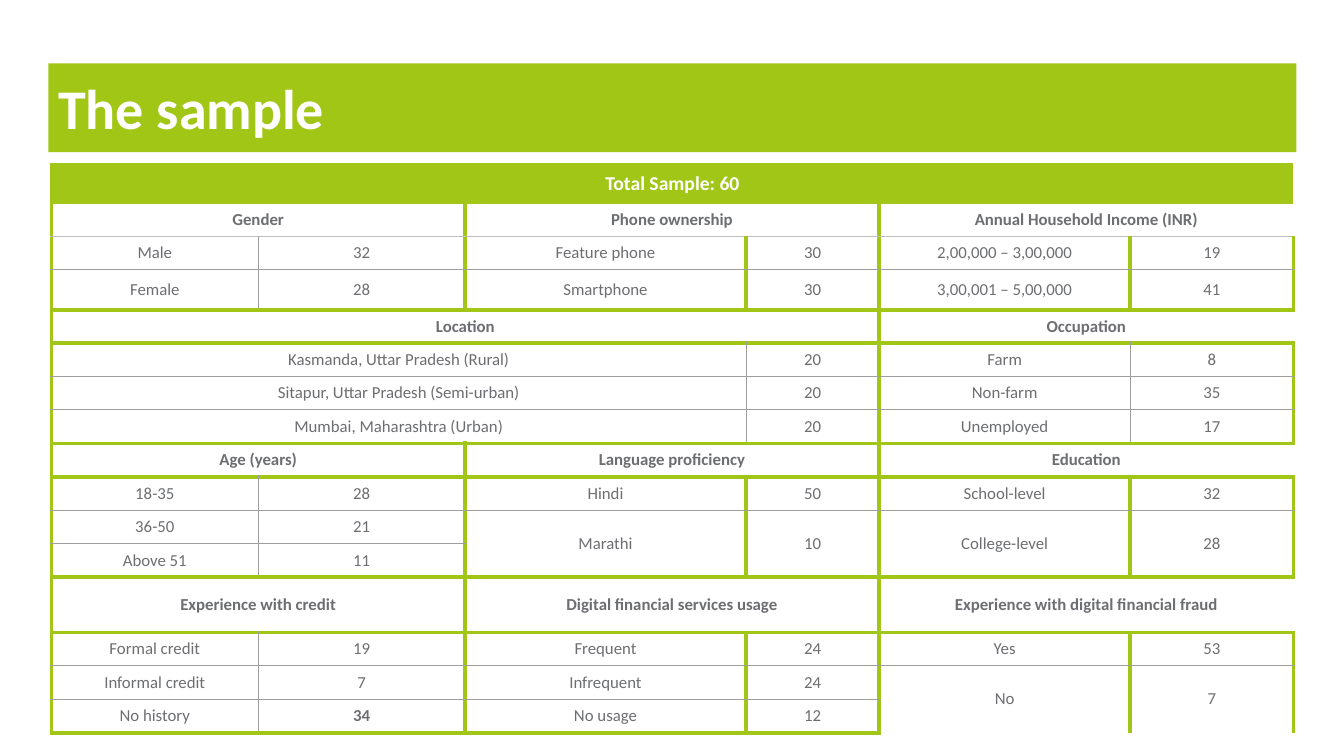
import pptx
import pptx.dml.color
import pptx.enum.shapes
import pptx.enum.text
import pptx.oxml
import pptx.oxml.ns
import pptx.util

COLOURS = {"banner": "A2C616", "green": "A2C617", "grey": "9E9E9E", "pale": "BCBEC0",
           "text": "6D6E71", "white": "FFFFFF"}
RULE_WIDTHS = {"green": 3, "grey": 0.75, "pale": 0.75}
NO_STYLE = "{2D5ABB26-0587-4C30-8999-92F81FD0307C}"

# Percent shares of the slide's width and height
COLUMNS = [15.38, 15.38, 20.93, 9.9, 18.68, 12.15]
ROWS = [4.93, 4.42, 4.42, 5.33] + [4.42] * 8 + [7.33] + [4.42] * 3

# Each band: first row, last row, rule below its headings, panels.
# Each panel: heading, first column, value column, last column, rule before the value, items.
BANDS = [
    (1, 3, "pale", [
        ("Gender", 0, 1, 1, "grey", [("Male", "32"), ("Female", "28")]),
        ("Phone ownership", 2, 3, 3, "green", [("Feature phone", "30"), ("Smartphone", "30")]),
        ("Annual Household Income (INR)", 4, 5, 5, "green",
         [("2,00,000 – 3,00,000", "19"), ("3,00,001 – 5,00,000", "41")]),
    ]),
    (4, 7, "green", [
        ("Location", 0, 3, 3, "grey",
         [("Kasmanda, Uttar Pradesh (Rural)", "20"),
          ("Sitapur, Uttar Pradesh (Semi-urban)", "20"),
          ("Mumbai, Maharashtra (Urban)", "20")]),
        ("Occupation", 4, 5, 5, "grey", [("Farm", "8"), ("Non-farm", "35"), ("Unemployed", "17")]),
    ]),
    (8, 11, "green", [
        ("Age (years)", 0, 1, 1, "grey", [("18-35", "28"), ("36-50", "21"), ("Above 51", "11")]),
        ("Language proficiency", 2, 3, 3, "green", [("Hindi", "50"), ("Marathi", "10")]),
        ("Education", 4, 5, 5, "green", [("School-level", "32"), ("College-level", "28")]),
    ]),
    (12, 15, "green", [
        ("Experience with credit", 0, 1, 1, "grey",
         [("Formal credit", "19"), ("Informal credit", "7"), ("No history", "34")]),
        ("Digital financial services usage", 2, 3, 3, "green",
         [("Frequent", "24"), ("Infrequent", "24"), ("No usage", "12")]),
        ("Experience with digital financial fraud", 4, 5, 5, "green", [("Yes", "53"), ("No", "7")]),
    ]),
]
BOLD_VALUES = {"34"}


class SlideBuilder:
    def __init__(self, presentation):
        self.width = presentation.slide_width
        self.height = presentation.slide_height
        self.slide = presentation.slides.add_slide(presentation.slide_layouts[6])

    def across(self, percent):
        return round(self.width * percent / 100)

    def down(self, percent):
        return round(self.height * percent / 100)

    def add_text(self, paragraph, text, colour, size, bold):
        run = paragraph.add_run()
        run.text = text
        style = {"name": "Calibri", "size": pptx.util.Pt(size), "bold": bold}
        for name, value in style.items():
            setattr(run.font, name, value)
        run.font.color.rgb = pptx.dml.color.RGBColor.from_string(COLOURS[colour])

    def banner(self, text, left, top, width, height):
        shape = self.slide.shapes.add_shape(
            pptx.enum.shapes.MSO_SHAPE.RECTANGLE, self.across(left), self.down(top),
            self.across(width), self.down(height))
        shape.shadow.inherit = False
        shape.fill.solid()
        shape.fill.fore_color.rgb = pptx.dml.color.RGBColor.from_string(COLOURS["banner"])
        shape.line.fill.background()
        inset = pptx.util.Inches(0.1)
        frame_format = {
            "margin_left": inset, "margin_right": inset, "margin_top": inset,
            "margin_bottom": inset, "word_wrap": True,
            "vertical_anchor": pptx.enum.text.MSO_ANCHOR.TOP,
            "auto_size": pptx.enum.text.MSO_AUTO_SIZE.SHAPE_TO_FIT_TEXT}
        for name, value in frame_format.items():
            setattr(shape.text_frame, name, value)
        paragraph = shape.text_frame.paragraphs[0]
        paragraph.alignment = pptx.enum.text.PP_ALIGN.LEFT
        self.add_text(paragraph, text, "white", 40, True)

    def start_table(self, left, top):
        self.table = self.slide.shapes.add_table(
            len(ROWS), len(COLUMNS), self.across(left), self.down(top),
            self.across(sum(COLUMNS)), self.down(sum(ROWS))).table
        self.table.first_row = self.table.horz_banding = False
        self.table._tbl.tblPr.find(pptx.oxml.ns.qn("a:tableStyleId")).text = NO_STYLE
        for column, share in zip(self.table.columns, COLUMNS):
            column.width = self.across(share)
        for row, share in zip(self.table.rows, ROWS):
            row.height = self.down(share)

    def rule(self, cell, side, colour):
        width = pptx.util.Pt(RULE_WIDTHS[colour])
        cell._tc.get_or_add_tcPr().append(pptx.oxml.parse_xml(
            f'<a:ln{side} {pptx.oxml.ns.nsdecls("a")} w="{width}"><a:solidFill>'
            f'<a:srgbClr val="{COLOURS[colour]}"/></a:solidFill></a:ln{side}>'))

    def block(self, text, rows, columns, rules, colour="text", fill="white", size=12, bold=False):
        """Fill the cells from first to last row and column; rules run left, right, top, bottom."""
        (top, bottom), (left, right) = rows, columns
        first = self.table.cell(top, left)
        if top != bottom or left != right:
            first.merge(self.table.cell(bottom, right))
        for row in range(top, bottom + 1):
            for column in range(left, right + 1):
                cell = self.table.cell(row, column)
                at_edge = [column == left, column == right, row == top, row == bottom]
                for side, touches, rule_colour in zip("LRTB", at_edge, rules):
                    if touches:
                        self.rule(cell, side, rule_colour)
                cell.fill.solid()
                cell.fill.fore_color.rgb = pptx.dml.color.RGBColor.from_string(COLOURS[fill])
        first.vertical_anchor = pptx.enum.text.MSO_ANCHOR.MIDDLE
        paragraph = first.text_frame.paragraphs[0]
        paragraph.alignment = pptx.enum.text.PP_ALIGN.CENTER
        self.add_text(paragraph, text, colour, size, bold)

    def panel(self, top, bottom, heading_rule, details):
        heading, left, value_column, right, divider, items = details
        self.block(heading, (top, top), (left, right),
                   ["green", "green", "green", heading_rule], bold=True)
        for index, (label, value) in enumerate(items):
            is_last = index == len(items) - 1
            row = top + 1 + index
            rows = (row, bottom if is_last else row)
            above = "grey" if index else heading_rule
            below = "green" if is_last else "grey"
            self.block(label, rows, (left, value_column - 1), ["green", divider, above, below])
            self.block(value, rows, (value_column, right), [divider, "green", above, below],
                       bold=value in BOLD_VALUES)


def main():
    presentation = pptx.Presentation()
    presentation.slide_width = pptx.util.Inches(13.33)
    presentation.slide_height = pptx.util.Inches(7.5)
    builder = SlideBuilder(presentation)
    builder.start_table(3.83, 21.87)
    builder.block("Total Sample: 60", (0, 0), (0, len(COLUMNS) - 1), ["green"] * 4,
                  colour="white", fill="green", size=14, bold=True)
    for top, bottom, heading_rule, panels in BANDS:
        for details in panels:
            builder.panel(top, bottom, heading_rule, details)
    builder.banner("The sample", 3.6, 8.4, 92.87, 11.73)
    presentation.save("out.pptx")


if __name__ == "__main__":
    main()
